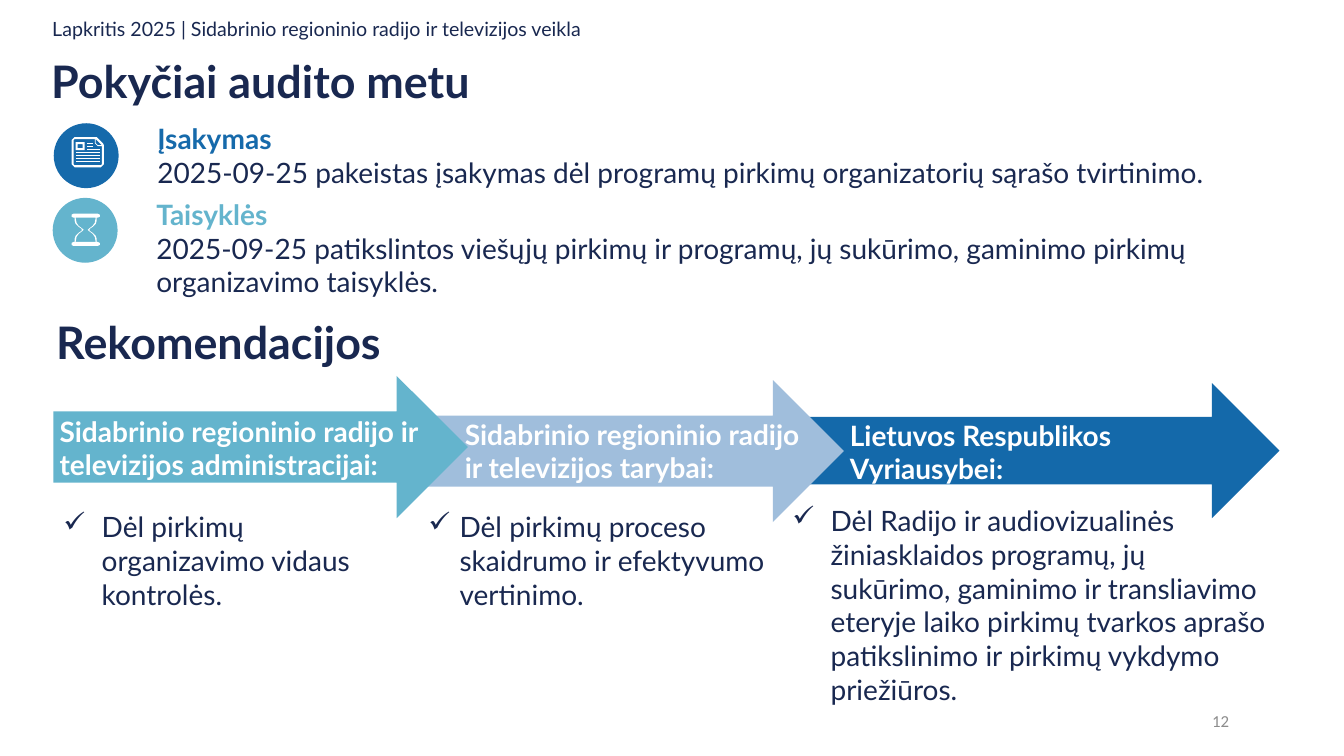
"""Build the slide on changes made during the audit and the recommendations."""
from dataclasses import dataclass

from lxml import etree
from pptx import Presentation
from pptx import util as u
from pptx.dml import color
from pptx.enum import shapes, text
from pptx.oxml import ns

NAVY, BLUE, TEAL, PALE, WHITE, GREY = "192850", "166AAB", "64B4CD", "A0BEDC", "FFFFFF", "8C8C8C"
Bounds = tuple[float, float, float, float]
Contour = list[tuple[float, float]]


@dataclass
class Style:
    size: float = 20
    colour: str = NAVY
    bold: bool = False
    font: str = "Lato"


@dataclass
class Label:
    bounds: Bounds
    words: str
    styles: tuple[Style, ...] = (Style(),)
    inset: bool = True
    grow: bool = False
    spacing: float | None = None
    hang: float = 0


@dataclass
class Step:
    arrow: Bounds
    fill: str
    heading: Label
    task: Label


@dataclass
class Change:
    circle: tuple[float, float]
    fill: str
    label: Label
    icon: list[list[Contour]]


def rgb(value: str) -> color.RGBColor:
    return color.RGBColor.from_string(value)


def place(bounds: Bounds) -> list[u.Length]:
    return [u.Inches(value) for value in bounds]


def add_bullet(para, hang: float) -> None:
    properties = para._p.get_or_add_pPr()
    properties.set("marL", str(u.Inches(hang)))
    properties.set("indent", str(-u.Inches(hang)))
    etree.SubElement(properties, ns.qn("a:buChar")).set("char", "✓")


def add_label(page, label: Label):
    box = page.shapes.add_textbox(*place(label.bounds))
    frame = box.text_frame
    frame.word_wrap = True
    if label.grow:
        frame.auto_size = text.MSO_AUTO_SIZE.SHAPE_TO_FIT_TEXT
    if not label.inset:
        frame.margin_left = frame.margin_right = frame.margin_top = frame.margin_bottom = 0
    frame.text = label.words
    para = frame.paragraphs[0]
    if label.hang:
        add_bullet(para, label.hang)
    if label.spacing:
        para.line_spacing = label.spacing
    for span, style in zip(para.runs, label.styles):
        span.font.name = style.font
        span.font.size = u.Pt(style.size)
        span.font.bold = style.bold
        span.font.color.rgb = rgb(style.colour)
    return box


def paint(shape, fill: str) -> None:
    shape.shadow.inherit = False
    shape.fill.solid()
    shape.fill.fore_color.rgb = rgb(fill)
    shape.line.fill.background()


def add_preset(page, preset, bounds: Bounds, fill: str):
    shape = page.shapes.add_shape(preset, *place(bounds))
    paint(shape, fill)
    return shape


def add_outline(page, contours: list[Contour]) -> None:
    points = [[(u.Inches(x), u.Inches(y)) for x, y in contour] for contour in contours]
    builder = page.shapes.build_freeform(*points[0][0])
    builder.add_line_segments(points[0][1:])
    for contour in points[1:]:
        builder.move_to(*contour[0])
        builder.add_line_segments(contour[1:])
    paint(builder.convert_to_shape(), WHITE)


def rectangle(left: float, top: float, right: float, bottom: float) -> Contour:
    return [(left, top), (right, top), (right, bottom), (left, bottom)]


def mirrored(quarter: Contour, x: float, y: float) -> Contour:
    right = quarter + [(dx, -dy) for dx, dy in reversed(quarter)]
    return [(x + dx, y + dy) for dx, dy in right + [(-dx, dy) for dx, dy in reversed(right)]]


def document_icon() -> list[list[Contour]]:
    edge = [(0.74, 1.36), (0.96, 1.36), (1.02, 1.42), (1.03, 1.44), (1.03, 1.63), (1, 1.66),
            (0.74, 1.66), (0.71, 1.63), (0.71, 1.39)]
    sheet = [(0.74, 1.38), (0.94, 1.38), (0.94, 1.42), (0.97, 1.45), (1.01, 1.45), (1.01, 1.63),
             (1, 1.64), (0.74, 1.64), (0.73, 1.63), (0.73, 1.39)]
    fold = [(0.95, 1.38), (1.01, 1.44), (0.97, 1.44), (0.95, 1.42)]
    thumbnail = [rectangle(0.75, 1.41, 0.84, 1.49), rectangle(0.77, 1.43, 0.82, 1.47)]
    spans = [(0.86, 0.92)] * 2 + [(0.86, 0.99)] + [(0.75, 0.99)] * 4
    bars = [[rectangle(left, 1.42 + 0.03 * row, right, 1.43 + 0.03 * row)]
            for row, (left, right) in enumerate(spans)]
    return [[edge, sheet, fold], thumbnail, *bars]


def hourglass_icon() -> list[list[Contour]]:
    edge = [(0.12, -0.16), (0.14, -0.15), (0.14, -0.13), (0.12, -0.12), (0.11, -0.12),
            (0.11, -0.09), (0.1, -0.06), (0.07, -0.03), (0.04, -0.01)]
    glass = [(0.1, -0.12), (0.09, -0.07), (0.07, -0.04), (0.03, -0.01), (0.02, 0)]
    return [[mirrored(edge, 0.85, 2.28), mirrored(glass, 0.85, 2.28)]]


def change_label(bounds: Bounds, words: str, colour: str) -> Label:
    return Label(bounds, words, (Style(colour=colour, bold=True), Style()), inset=False, grow=True)


def heading(bounds: Bounds, words: str) -> Label:
    return Label(bounds, words, (Style(colour=WHITE, bold=True),), inset=False, grow=True)


def task(bounds: Bounds, words: str, hang: float = 0.38) -> Label:
    return Label(bounds, words, grow=True, hang=hang)


TITLE = (Style(32, bold=True),)
TITLES = [
    Label((0.42, 0.14, 11.5, 0.49),
          "Lapkritis 2025 | Sidabrinio regioninio radijo ir televizijos veikla",
          (Style(14),), spacing=0.9),
    Label((0.41, 0.54, 11.5, 0.58), "Pokyčiai audito metu", TITLE, spacing=0.9),
    Label((0.46, 3.13, 11.83, 0.58), "Rekomendacijos", TITLE, spacing=0.9),
]
CHANGES = [
    Change((0.54, 1.23), BLUE, change_label(
        (1.56, 1.21, 11.32, 1.08),
        "Įsakymas\v2025-09-25 pakeistas įsakymas dėl programų pirkimų organizatorių "
        "sąrašo tvirtinimo.", BLUE), document_icon()),
    Change((0.53, 1.97), TEAL, change_label(
        (1.55, 1.96, 11.28, 1.51),
        "Taisyklės\v2025-09-25 patikslintos viešųjų pirkimų ir programų, jų sukūrimo, "
        "gaminimo pirkimų organizavimo taisyklės.", TEAL), hourglass_icon()),
]
STEPS = [
    Step((0.53, 3.73, 4.11, 1.41), TEAL,
         heading((0.59, 4.11, 4.11, 1.04),
                 "Sidabrinio regioninio radijo ir televizijos administracijai:"),
         task((0.53, 5.01, 3.34, 1.11), "Dėl pirkimų organizavimo vidaus kontrolės.")),
    Step((4.09, 3.77, 4.28, 1.41), PALE,
         heading((4.61, 4.14, 3.46, 1.04), "Sidabrinio regioninio radijo ir televizijos tarybai:"),
         task((4.15, 5.01, 3.54, 1.11),
              "Dėl pirkimų proceso skaidrumo ir efektyvumo vertinimo.", 0.31)),
    Step((7.97, 3.8, 4.72, 1.34), "1469AA",
         heading((8.43, 4.15, 3.35, 1.04), "Lietuvos Respublikos Vyriausybei:"),
         task((7.76, 4.95, 4.9, 2.12),
              "Dėl Radijo ir audiovizualinės žiniasklaidos programų, jų sukūrimo, gaminimo ir "
              "transliavimo eteryje laiko pirkimų tvarkos aprašo patikslinimo ir pirkimų "
              "vykdymo priežiūros.")),
]
PAGE_NUMBER = Label((9.42, 6.95, 2.87, 0.4), "12", (Style(12, GREY, font="Calibri"),))


def main() -> None:
    deck = Presentation()
    deck.slide_width, deck.slide_height = u.Inches(13.33), u.Inches(7.5)
    page = deck.slides.add_slide(deck.slide_layouts[6])
    for title in TITLES:
        add_label(page, title)
    for change in CHANGES:
        circle = add_preset(page, shapes.MSO_SHAPE.OVAL, (*change.circle, 0.63, 0.63), change.fill)
        circle.line.color.rgb = rgb(change.fill)
        circle.line.width = u.Pt(1)
        for contours in change.icon:
            add_outline(page, contours)
        add_label(page, change.label)
    for step in reversed(STEPS):
        add_preset(page, shapes.MSO_SHAPE.RIGHT_ARROW, step.arrow, step.fill)
    for step in STEPS:
        add_label(page, step.heading)
        add_label(page, step.task)
    number = add_label(page, PAGE_NUMBER).text_frame
    number.vertical_anchor = text.MSO_ANCHOR.MIDDLE
    number.paragraphs[0].alignment = text.PP_ALIGN.RIGHT
    deck.save("out.pptx")


if __name__ == "__main__":
    main()
